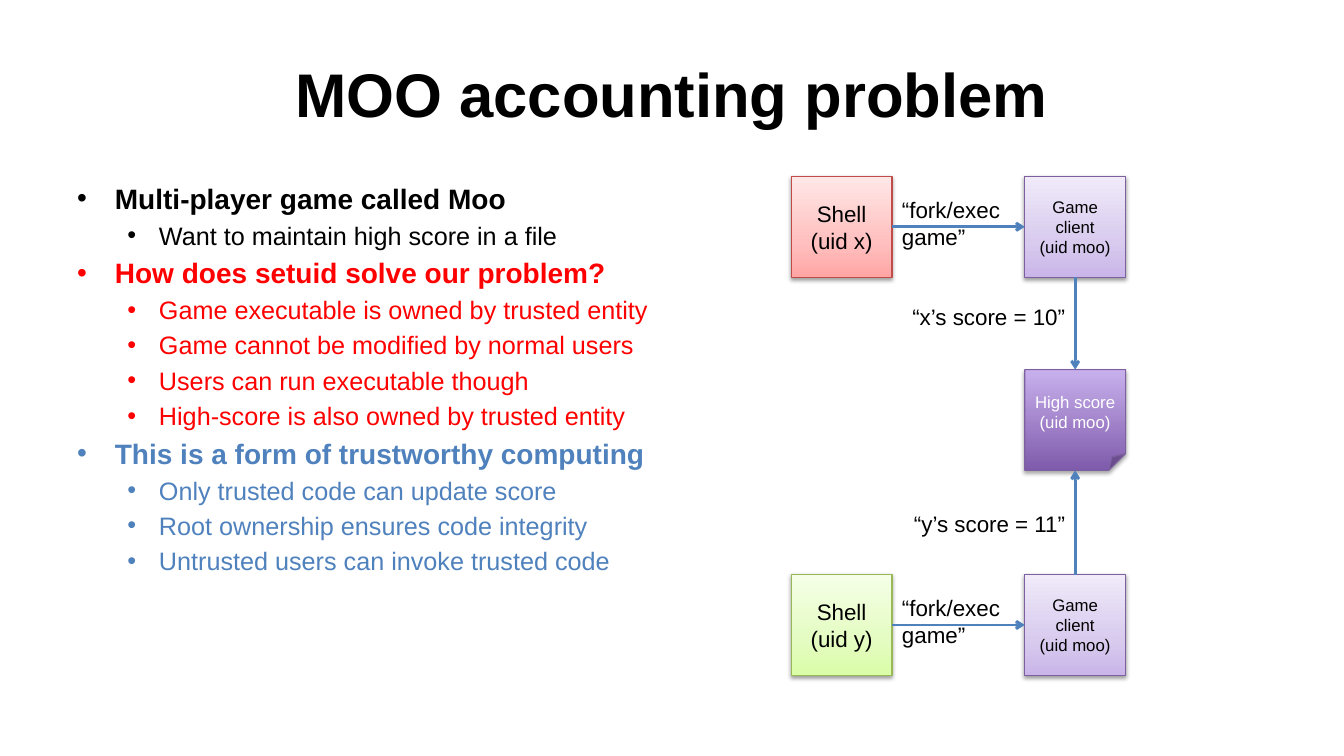
from dataclasses import dataclass
from enum import IntEnum

from lxml.etree import SubElement
from pptx import Presentation
from pptx.dml.color import RGBColor
from pptx.enum.shapes import MSO_CONNECTOR, MSO_SHAPE
from pptx.enum.text import MSO_ANCHOR, MSO_AUTO_SIZE, PP_ALIGN
from pptx.oxml.ns import qn
from pptx.shapes.autoshape import Shape
from pptx.slide import Slide
from pptx.text.text import TextFrame
from pptx.util import Inches, Pt

# The slide is a grid of 160 columns by 90 rows.
COLUMNS, ROWS = 160, 90
CELL = Inches(1) / 12


@dataclass(frozen=True)
class Tint:
    stops: tuple[tuple[int, str], ...]
    outline: str
    shadow_opacity: int = 38
    shadow_distance: float = 1.6


@dataclass(frozen=True)
class Theme:
    font: str = "Arial"
    ink: str = "000000"
    paper: str = "FFFFFF"
    question: str = "FF0000"
    accent: str = "4F81BD"
    shadow_blur: float = 3.1
    title_size: int = 44
    topic_size: int = 20
    point_size: int = 18
    label_size: int = 16
    small_size: int = 12
    arrow_width: float = 2
    outline_width: float = 0.75
    red: Tint = Tint(((0, "FFA6A5"), (35, "FFC0BF"), (100, "FFE7E7")), "BF4C48")
    green: Tint = Tint(((0, "DAFDA7"), (35, "E4FCC2"), (100, "F5FFE7")), "98B955")
    lilac: Tint = Tint(((0, "C9B5E8"), (35, "D8CBEE"), (100, "F0EAF9")), "7D60A0")
    purple: Tint = Tint(((0, "7F5BAB"), (100, "C8B0ED")), "7D60A0", 35, 1.8)


THEME = Theme()


class Side(IntEnum):
    TOP = 0
    LEFT = 1
    BOTTOM = 2
    RIGHT = 3


@dataclass(frozen=True)
class Area:
    column: float
    row: float
    columns: float
    rows: float

    def emu(self) -> tuple[int, ...]:
        return tuple(round(n * CELL) for n in (self.column, self.row, self.columns, self.rows))


@dataclass(frozen=True)
class Topic:
    heading: str
    points: tuple[str, ...]
    color: str


@dataclass(frozen=True)
class Node:
    key: str
    text: str
    column: float
    row: float
    tint: Tint
    size: int = THEME.small_size
    color: str = THEME.ink
    outline: MSO_SHAPE = MSO_SHAPE.RECTANGLE


@dataclass(frozen=True)
class Arrow:
    start: str
    start_side: Side
    end: str
    end_side: Side


@dataclass(frozen=True)
class Label:
    text: str
    area: Area
    align: PP_ALIGN = PP_ALIGN.LEFT


TOPICS = (
    Topic("Multi-player game called Moo", ("Want to maintain high score in a file",), THEME.ink),
    Topic("How does setuid solve our problem?", (
        "Game executable is owned by trusted entity",
        "Game cannot be modified by normal users",
        "Users can run executable though",
        "High-score is also owned by trusted entity"), THEME.question),
    Topic("This is a form of trustworthy computing", (
        "Only trusted code can update score",
        "Root ownership ensures code integrity",
        "Untrusted users can invoke trusted code"), THEME.accent),
)

TITLE_AREA = Area(8, 3.6, 144, 15)
BODY_AREA = Area(8, 21, 144, 59.4)
NODE_SPAN = 12
SHELL_COLUMN, GAME_COLUMN = 94.2, 122
X_ROW, SCORE_ROW, Y_ROW = 21, 44, 68.4
SCORE_LABEL_SPAN = 20.6
SCORE_LABEL_COLUMN = GAME_COLUMN + NODE_SPAN / 2 - SCORE_LABEL_SPAN

NODES = (
    Node("score", "High score\n(uid moo)", GAME_COLUMN, SCORE_ROW, THEME.purple,
         color=THEME.paper, outline=MSO_SHAPE.FOLDED_CORNER),
    Node("game y", "Game client\n(uid moo)", GAME_COLUMN, Y_ROW, THEME.lilac),
    Node("game x", "Game\nclient\n(uid moo)", GAME_COLUMN, X_ROW, THEME.lilac),
    Node("shell y", "Shell\n(uid y)", SHELL_COLUMN, Y_ROW, THEME.green, THEME.label_size),
    Node("shell x", "Shell\n(uid x)", SHELL_COLUMN, X_ROW, THEME.red, THEME.label_size),
)
ARROWS = (
    Arrow("game x", Side.BOTTOM, "score", Side.TOP),
    Arrow("game y", Side.TOP, "score", Side.BOTTOM),
    Arrow("shell x", Side.RIGHT, "game x", Side.LEFT),
    Arrow("shell y", Side.RIGHT, "game y", Side.LEFT),
)
LABELS = (
    *(Label("“fork/exec\ngame”", Area(SHELL_COLUMN + NODE_SPAN, row + 1.8, 14.2, 7.7))
      for row in (X_ROW, Y_ROW)),
    *(Label(text, Area(SCORE_LABEL_COLUMN, row, SCORE_LABEL_SPAN, 4.4), PP_ALIGN.RIGHT)
      for text, row in (("“x’s score = 10”", 35.5), ("“y’s score = 11”", 60.1))),
)


def style_text(frame: TextFrame, size: int, color: str, align: PP_ALIGN, bold: bool = False) -> None:
    for paragraph in frame.paragraphs:
        paragraph.alignment = align
        style_font(paragraph.runs[0].font, size, color, bold)


def style_font(font, size: int, color: str, bold: bool) -> None:
    font.name, font.size, font.bold = THEME.font, Pt(size), bold
    font.color.rgb = RGBColor.from_string(color)


def draw_title(slide: Slide) -> None:
    frame = slide.shapes.add_textbox(*TITLE_AREA.emu()).text_frame
    frame.word_wrap = True
    frame.vertical_anchor = MSO_ANCHOR.MIDDLE
    frame.text = "MOO accounting problem"
    style_text(frame, THEME.title_size, THEME.ink, PP_ALIGN.CENTER, bold=True)


def draw_topics(slide: Slide) -> None:
    frame = slide.shapes.add_textbox(*BODY_AREA.emu()).text_frame
    frame.word_wrap = True
    lines = [(text, level, topic.color) for topic in TOPICS
             for text, level in ((topic.heading, 0), *((point, 1) for point in topic.points))]
    frame.text = "\n".join(text for text, _, _ in lines)
    for paragraph, (_, level, color) in zip(frame.paragraphs, lines):
        paragraph.level = level
        size = THEME.point_size if level else THEME.topic_size
        style_font(paragraph.runs[0].font, size, color, bold=level == 0)
        margin, hang = ((9.75, 3.75), (4.5, 4.5))[level == 0]
        properties = paragraph._p.get_or_add_pPr()
        properties.set("marL", str(round(margin * CELL)))
        properties.set("indent", str(round(-hang * CELL)))
        SubElement(SubElement(properties, qn("a:spcBef")), qn("a:spcPct"), val="20000")
        SubElement(properties, qn("a:buFont"), typeface=THEME.font)
        SubElement(properties, qn("a:buChar"), char="•")


def apply_tint(shape: Shape, tint: Tint) -> None:
    """Fill from the bottom up, with a thin outline and a soft shadow below."""
    shape.fill.gradient()
    shape.fill.gradient_angle = 90
    stops = shape.element.spPr.find(".//" + qn("a:gsLst"))
    stops.clear()
    for position, color in tint.stops:
        stop = SubElement(stops, qn("a:gs"), pos=str(position * 1000))
        SubElement(stop, qn("a:srgbClr"), val=color)
    shape.line.color.rgb = RGBColor.from_string(tint.outline)
    shape.line.width = Pt(THEME.outline_width)
    shape.shadow.inherit = False
    shadow = SubElement(shape.element.spPr.find(qn("a:effectLst")), qn("a:outerShdw"),
                        blurRad=str(Pt(THEME.shadow_blur)), dist=str(Pt(tint.shadow_distance)),
                        dir="5400000", rotWithShape="0")
    shade = SubElement(shadow, qn("a:srgbClr"), val=THEME.ink)
    SubElement(shade, qn("a:alpha"), val=str(tint.shadow_opacity * 1000))


def draw_node(slide: Slide, node: Node) -> Shape:
    area = Area(node.column, node.row, NODE_SPAN, NODE_SPAN)
    shape = slide.shapes.add_shape(node.outline, *area.emu())
    apply_tint(shape, node.tint)
    shape.text_frame.text = node.text
    shape.text_frame.vertical_anchor = MSO_ANCHOR.MIDDLE
    style_text(shape.text_frame, node.size, node.color, PP_ALIGN.CENTER)
    return shape


def draw_arrow(slide: Slide, arrow: Arrow, boxes: dict[str, Shape]) -> None:
    connector = slide.shapes.add_connector(MSO_CONNECTOR.STRAIGHT, 0, 0, 0, 0)
    connector.begin_connect(boxes[arrow.start], arrow.start_side.value)
    connector.end_connect(boxes[arrow.end], arrow.end_side.value)
    connector.line.color.rgb = RGBColor.from_string(THEME.accent)
    connector.line.width = Pt(THEME.arrow_width)
    properties = connector.element.spPr
    SubElement(properties.find(qn("a:ln")), qn("a:tailEnd"), type="arrow")
    SubElement(properties, qn("a:effectLst"))


def draw_label(slide: Slide, label: Label) -> None:
    frame = slide.shapes.add_textbox(*label.area.emu()).text_frame
    frame.word_wrap = False
    frame.auto_size = MSO_AUTO_SIZE.SHAPE_TO_FIT_TEXT
    frame.text = label.text
    style_text(frame, THEME.label_size, THEME.ink, label.align)


def main() -> None:
    deck = Presentation()
    deck.slide_width, deck.slide_height = round(COLUMNS * CELL), round(ROWS * CELL)
    slide = deck.slides.add_slide(deck.slide_layouts[6])
    draw_title(slide)
    draw_topics(slide)
    boxes = {node.key: draw_node(slide, node) for node in NODES}
    for arrow in ARROWS:
        draw_arrow(slide, arrow, boxes)
    for label in LABELS:
        draw_label(slide, label)
    deck.save("out.pptx")


if __name__ == "__main__":
    main()
